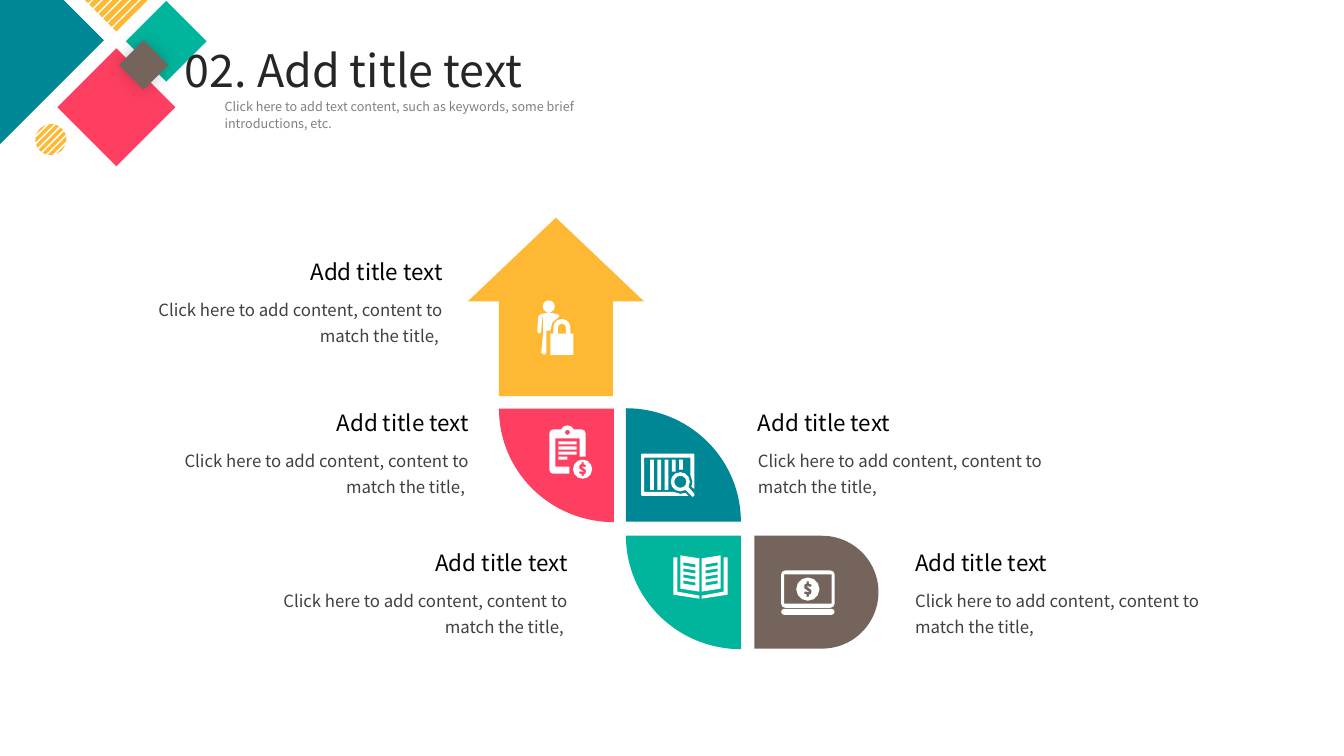
from math import cos, radians, sin, sqrt

from lxml import etree
from pptx import Presentation
from pptx.dml.color import RGBColor
from pptx.enum import shapes, text
from pptx.oxml.ns import qn
from pptx.util import Pt

TEAL = RGBColor(0x00, 0x87, 0x95)
PINK = RGBColor(0xFE, 0x3F, 0x61)
GREEN = RGBColor(0x01, 0xB5, 0x9C)
GOLD = RGBColor(0xFE, 0xB8, 0x34)
BROWN = RGBColor(0x75, 0x64, 0x5C)
WHITE = RGBColor(0xFF, 0xFF, 0xFF)
BLACK = RGBColor(0, 0, 0)
INK = RGBColor(0x26, 0x26, 0x26)
DARK = RGBColor(0x40, 0x40, 0x40)
GREY = RGBColor(0x80, 0x80, 0x80)

FONT = "Noto Sans CJK SC"
KIND = shapes.MSO_SHAPE
LEFT, MID, RIGHT = text.PP_ALIGN.LEFT, text.PP_ALIGN.CENTER, text.PP_ALIGN.RIGHT

TITLE = "02. Add title text"
INTRO = ("Click here to add text content, such as keywords, "
         "some brief introductions, etc.")
HEAD = "Add title text"
BODY = "Click here to add content, content to match the title,"

# Edge of the text block, top, width of its heading, alignment
NOTES = [
    (534.24, 288.72, 131.76, LEFT),
    (646.56, 388.8, 154.08, LEFT),
    (412.56, 388.8, 154.8, RIGHT),
    (342, 288.72, 126, RIGHT),
    (323.28, 180.72, 143.28, RIGHT),
]
BODY_W = 223.92

# Kind, (left, top, width, height), colour, turn, adjustments
PARTS = [
    (KIND.PIE, (365.04, 291.6, 164.16, 162), TEAL, 0, (162, 0)),
    (KIND.PIE, (356.4, 210.96, 164.16, 162), PINK, 0, (54, 108)),
    (KIND.PIE, (447.12, 301.68, 164.16, 162), GREEN, 0, (54, 108)),
    (KIND.UP_ARROW, (334.08, 155.52, 126, 127.44), GOLD, 0, (0.646, 0.475)),
    (KIND.ROUND_2_SAME_RECTANGLE, (542.88, 378.72, 80.64, 88.56), BROWN, 90, (0.5, 0)),
]
BACK = [(-75.6, -46.08, 149.76, TEAL), (41.04, 34.56, 84.24, PINK)]
FRONT = [(90, 0.72, 57.6, GREEN), (84.96, 28.8, 35.28, BROWN)]
BARS, BAR_GAP = 7, 3.38
BALL, BALL_R = (36.36, 99.72), 11.16
BALL_GAP, BALL_BAR = 3.7, 2.4
UNIT = 0.72  # points in one step of the icon grid


def arc(x, y, r, start, end, n=2):
    turns = [radians(start + (end - start) * i / n) for i in range(n + 1)]
    return [(x + r * cos(t), y + r * sin(t)) for t in turns]


def disc(x, y, r, n=12):
    return arc(x, y, r, 0, 360, n)[:-1]


def box(x, y, w, h):
    return [(x, y), (x + w, y), (x + w, y + h), (x, y + h)]


def pad(x, y, w, h, r):
    """Box with round corners."""
    x2, y2 = x + w - r, y + h - r
    return (arc(x + r, y + r, r, 180, 270) + arc(x2, y + r, r, 270, 360)
            + arc(x2, y2, r, 0, 90) + arc(x + r, y2, r, 90, 180))


def dollar(x, y, size=1):
    half = [(-1, -7), (1, -7), (1, -5), (3.5, -4), (3, -2.2),
            (-1, -2.5), (3.3, 0.8), (3, 4.2), (1, 5.2)]
    return [(x + k * a * size, y + k * b * size) for k in (1, -1) for a, b in half]


def guard():
    man = [(11, 12), (21, 14), (22, 16), (15, 22), (13, 30), (9, 30),
           (9, 52), (7, 54), (4, 52), (6, 31), (6, 17), (5, 17),
           (4, 31), (2, 33), (0, 31), (1, 16), (3, 14)]
    lock = [(13, 33), (16, 33), *arc(24.5, 27, 8.5, 180, 360, 6),
            (33, 33), (36, 33), (36, 54), (13, 54)]
    return [man, disc(11.5, 6, 6), lock,
            [(20.5, 33), *arc(24.5, 27, 4, 180, 360, 4), (28.5, 33)]]


def bill():
    board = [*arc(4, 8, 4, 180, 270), *arc(18, 7, 7, 205, 335, 4),
             *arc(32, 8, 4, 270, 360), (36, 31), (30, 31), (30, 13), (6, 13),
             (6, 41), (20, 41), (20, 48), *arc(4, 44, 4, 90, 180)]
    lines = [box(9, 16 + 5 * i, 9 if i == 3 else 18, 3) for i in range(4)]
    return [board, disc(18, 7, 2.5, 8), *lines, disc(33, 43.5, 9.5), dollar(33, 43.5)]


def scan():
    frame = [(0, 1), (1, 0), (52, 0), (53, 1), (53, 35), (50, 33), (51, 28),
             (49, 21), (49, 4), (3, 4), (3, 38), (32, 38), (39, 40), (44, 39),
             (47, 42), (1, 42), (0, 41)]
    bars = [box(9 + 7.2 * i, 6, 3.7, h) for i, h in enumerate((30, 30, 30, 12, 10))]
    grip = [(47, 33), (53, 40), (53, 42), (51, 43), (44, 36)]
    return [frame, *bars, disc(39, 28, 9.5), disc(39, 28, 6), grip]


def book():
    side = [[(7, 0), (26, 3), (26, 36), (7, 33)],
            [(0, 2), (4, 2), (4, 36), (26, 40), (26, 43), (0, 39)]]
    side += [[(10, y), (22, y + 2), (22, y + 5), (10, y + 3)] for y in range(7, 26, 6)]
    return side + [[(54 - x, y) for x, y in part] for part in side]


def laptop():
    return [pad(0, 38, 53, 6, 3), pad(0, 0, 53, 37, 4), box(3, 4, 47, 29),
            disc(26.5, 18.5, 11.5), dollar(26.5, 18.5, 1.1)]


def ball():
    """Slanted bands cut from a disc."""
    bands = []
    for i in range(-3, 4):
        cuts = [i * BALL_GAP + k * BALL_BAR / 2 for k in (-1, 1)]
        cuts = [max(-BALL_R, min(BALL_R, d)) for d in cuts]
        ends = [(d, sqrt(BALL_R ** 2 - d ** 2)) for d in cuts]
        band = ends + [(d, -h) for d, h in reversed(ends)]
        bands.append([((d + h) / sqrt(2), (d - h) / sqrt(2)) for d, h in band])
    return bands


ICONS = [
    (guard, 383.76, 214.56), (bill, 392.4, 303.84), (scan, 457.92, 324),
    (book, 480.96, 396.72), (laptop, 558, 407.52),
]

deck = Presentation()
deck.slide_width, deck.slide_height = Pt(960), Pt(540)
page = deck.slides.add_slide(deck.slide_layouts[6])


def paint(shape, color):
    shape.shadow.inherit = False
    shape.fill.solid()
    shape.fill.fore_color.rgb = color
    shape.line.fill.background()


def put(kind, area, color, turn=0, adjust=()):
    shape = page.shapes.add_shape(kind, *map(Pt, area))
    paint(shape, color)
    shape.rotation = turn
    for i, value in enumerate(adjust):
        shape.adjustments[i] = value
    return shape


def draw(loops, left, top, color, unit=UNIT):
    """One outline from several loops; a loop inside another is a hole."""
    pen = None
    for loop in loops:
        first, *rest = [(Pt(left + x * unit), Pt(top + y * unit)) for x, y in loop]
        if pen is None:
            pen = page.shapes.build_freeform(*first)
        else:
            pen.move_to(*first)
        pen.add_line_segments(rest)
    paint(pen.convert_to_shape(), color)


def write(words, area, size, color, align=LEFT, space=None, wrap=True):
    frame = page.shapes.add_textbox(*map(Pt, area)).text_frame
    para = frame.paragraphs[0]
    run = para.add_run()
    run.text = words
    run.font.color.rgb = color
    styles = [
        (frame, {"word_wrap": wrap, "auto_size": text.MSO_AUTO_SIZE.SHAPE_TO_FIT_TEXT}),
        (para, {"alignment": align, "line_spacing": space}),
        (run.font, {"name": FONT, "size": Pt(size)}),
    ]
    for item, style in styles:
        for key, value in style.items():
            setattr(item, key, value)


for part in PARTS:
    put(*part)
for icon, left, top in ICONS:
    draw(icon(), left, top, WHITE)

for left, top, size, color in BACK:
    put(KIND.DIAMOND, (left, top, size, size), color)
for i in range(BARS):
    put(KIND.RECTANGLE, (71.28 + i * BAR_GAP, -26.64 + i * BAR_GAP, 3.6, 32.4), GOLD, 45)
for left, top, size, color in FRONT:
    gem = put(KIND.DIAMOND, (left, top, size, size), color)
glow = etree.SubElement(gem.element.spPr.find(qn("a:effectLst")), qn("a:outerShdw"),
                        blurRad=str(Pt(13)), algn="ctr", rotWithShape="0")
tint = etree.SubElement(glow, qn("a:srgbClr"), val=str(BLACK))
etree.SubElement(tint, qn("a:alpha"), val="21000")
draw(ball(), *BALL, GOLD, 1)

write(TITLE, (117.36, 26.64, 270.72, 46.08), 32, INK, MID, wrap=False)
write(INTRO, (153.36, 65.52, 266.4, 32.4), 9, GREY, space=1.14)
for edge, top, width, align in NOTES:
    back = align == RIGHT
    write(BODY + " " * back, (edge - back * BODY_W, top + 25.2, BODY_W, 43.2),
          12, DARK, align, 1.3)
    write(HEAD, (edge - back * width, top, width, 26.64), 16, BLACK, align)

deck.save("out.pptx")
